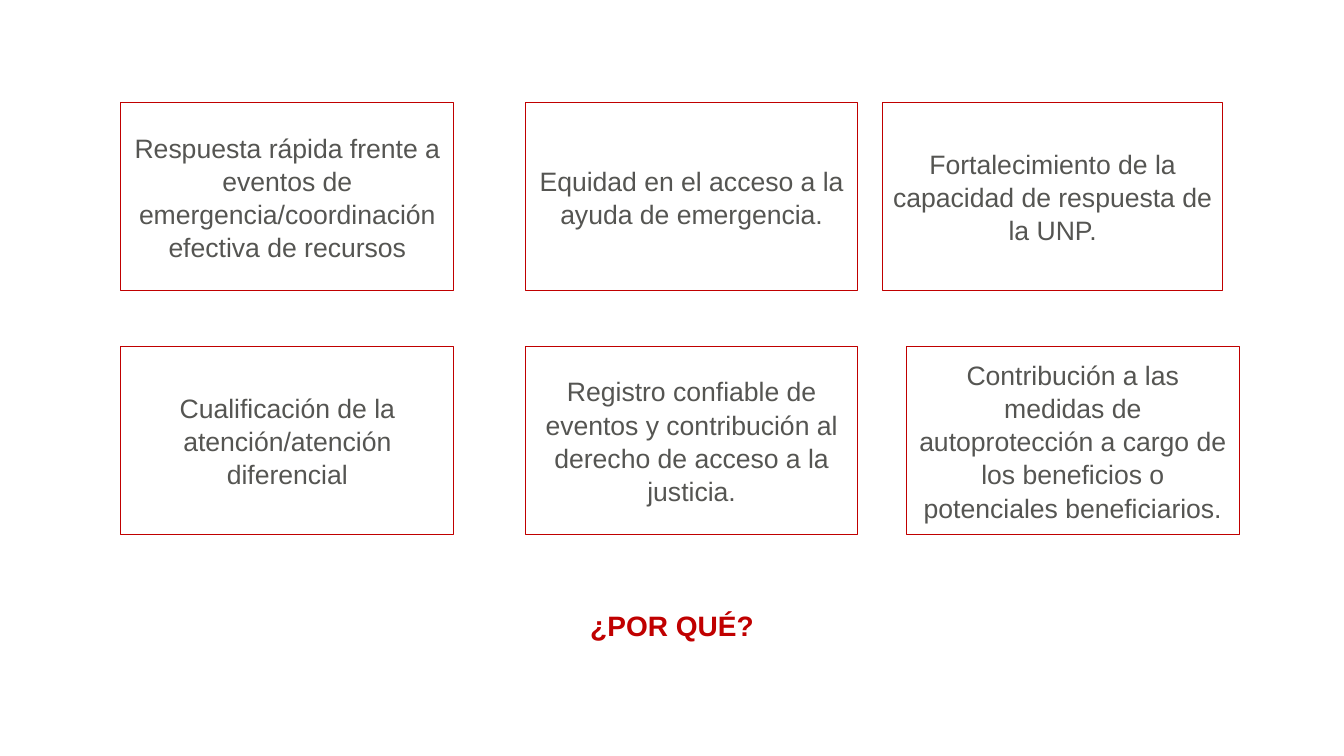
from pptx import Presentation
from pptx.dml.color import RGBColor
from pptx.enum.shapes import MSO_SHAPE
from pptx.enum.text import MSO_ANCHOR, PP_ALIGN
from pptx.util import Inches, Pt

RED = RGBColor(0xC0, 0x00, 0x00)
GRAY = RGBColor(0x55, 0x55, 0x52)
LEFT, TOP, WIDE, HIGH = 1.2, 1.02, 3.3, 1.86
COL, ROW = 4.01, 2.42
REASONS = [
    [
        ("Respuesta rápida frente a eventos de emergencia/coordinación efectiva de recursos", 0, WIDE),
        ("Equidad en el acceso a la ayuda de emergencia.", 0, WIDE),
        ("Fortalecimiento de la capacidad de respuesta de la UNP.", -0.47, 3.38),
    ],
    [
        ("Cualificación de la atención/atención diferencial", 0, WIDE),
        ("Registro confiable de eventos y contribución al derecho de acceso a la justicia.", 0, WIDE),
        ("Contribución a las medidas de autoprotección a cargo de los beneficios "
         "o potenciales beneficiarios.", -0.23, WIDE),
    ],
]


def write(shape, text, size=19, color=GRAY, bold=False, inset=0.1, space=1.04):
    """Fill a shape with one centred, formatted paragraph."""
    frame = shape.text_frame
    frame.word_wrap = True
    frame.vertical_anchor = MSO_ANCHOR.MIDDLE
    frame.margin_left = frame.margin_right = Inches(inset)
    frame.margin_top = frame.margin_bottom = Inches(inset)
    para = frame.paragraphs[0]
    para.alignment = PP_ALIGN.CENTER
    para.line_spacing = space
    run = para.add_run()
    run.text = text
    run.font.name = "Arial"
    run.font.size = Pt(size)
    run.font.bold = bold
    run.font.color.rgb = color


def card(slide, text, box):
    """Draw one outlined reason in the given box."""
    shape = slide.shapes.add_shape(MSO_SHAPE.RECTANGLE, *map(Inches, box))
    shape.shadow.inherit = False
    shape.fill.background()
    shape.line.color.rgb = RED
    shape.line.width = Pt(0.75)
    write(shape, text)


def grid(slide, left, top):
    """Place the reasons in rows and columns from the given corner."""
    for row, cells in enumerate(REASONS):
        for col, (text, shift, wide) in enumerate(cells):
            card(slide, text, (left + col * COL + shift, top + row * ROW, wide, HIGH))


def title(slide, box):
    """Place the closing question in the given box."""
    label = slide.shapes.add_textbox(*map(Inches, box))
    write(label, "¿POR QUÉ?", size=20, color=RED, bold=True, inset=0, space=1)


def main():
    """Build and save the slide."""
    deck = Presentation()
    deck.slide_width, deck.slide_height = Inches(13.33), Inches(7.5)
    slide = deck.slides.add_slide(deck.slide_layouts[6])
    grid(slide, LEFT, TOP)
    title(slide, (2.69, 5.93, 7.95, 0.55))
    deck.save("out.pptx")


if __name__ == "__main__":
    main()
